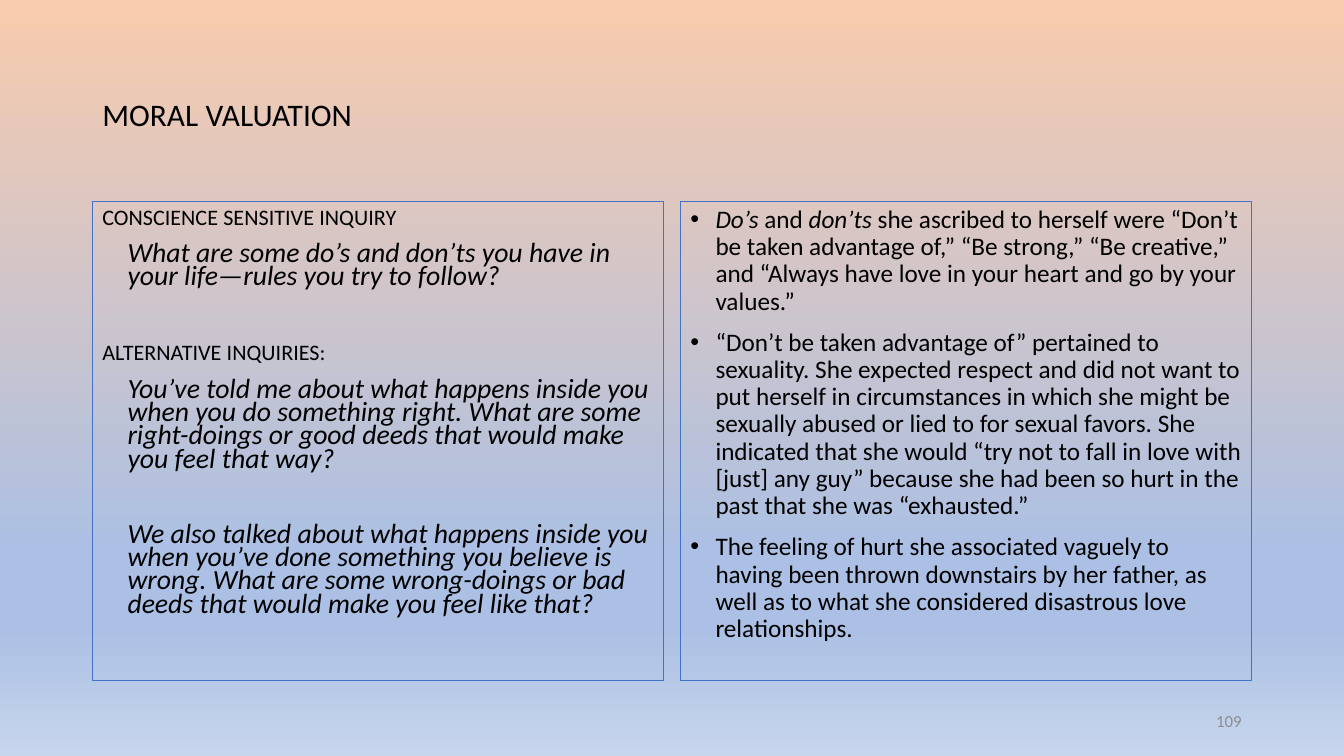
import dataclasses

import lxml.etree
import pptx
import pptx.dml.color
import pptx.enum.shapes
import pptx.enum.text
import pptx.oxml.ns
import pptx.util

ANCHOR = pptx.enum.text.MSO_ANCHOR
ALIGN = pptx.enum.text.PP_ALIGN


@dataclasses.dataclass(frozen=True)
class Theme:
    """Colours, font and type sizes of the deck."""
    font: str = "Calibri"
    ink: str = "000000"
    muted: str = "8C8C8C"
    outline: str = "4472C4"
    backdrop: tuple = ((0, "F8CBAD"), (74, "ABC0E4"), (83, "ABC0E4"), (100, "C7D5ED"))
    title_size: float = 28
    inquiry_size: float = 19.8
    answer_size: float = 18
    number_size: float = 12
    gap: float = 10
    wide_gap: float = 37


class SlideBuilder:
    """Draws styled elements on a grid of 160 columns and 150 rows."""

    def __init__(self, deck, theme):
        self.theme = theme
        self.column = deck.slide_width / 160
        self.row = deck.slide_height / 150
        self.page = deck.slides.add_slide(deck.slide_layouts[6])

    def place(self, left, top, width, height):
        return (round(left * self.column), round(top * self.row),
                round(width * self.column), round(height * self.row))

    def colour(self, value):
        return pptx.dml.color.RGBColor.from_string(value)

    def backdrop(self):
        fill = self.page.background.fill
        fill.gradient()
        fill.gradient_angle = 270
        qn = pptx.oxml.ns.qn
        stops = next(self.page.element.iter(qn("a:gsLst")))
        for stop in list(stops):
            stops.remove(stop)
        for position, value in self.theme.backdrop:
            stop = lxml.etree.SubElement(stops, qn("a:gs"), pos=str(position * 1000))
            lxml.etree.SubElement(stop, qn("a:srgbClr"), val=value)

    def label(self, area):
        box = self.page.shapes.add_textbox(*self.place(*area))
        box.text_frame.word_wrap = True
        box.text_frame.vertical_anchor = ANCHOR.MIDDLE
        return box.text_frame

    def panel(self, area):
        box = self.page.shapes.add_shape(
            pptx.enum.shapes.MSO_SHAPE.RECTANGLE, *self.place(*area))
        box.shadow.inherit = False
        box.fill.background()
        box.line.color.rgb = self.colour(self.theme.outline)
        box.line.width = pptx.util.Pt(0.75)
        box.text_frame.word_wrap = True
        box.text_frame.vertical_anchor = ANCHOR.TOP
        return box.text_frame

    def paragraph(self, frame, spans, size, colour=None, spacing=1.0, before=0,
                  align=ALIGN.LEFT, indent=0, bullet=False):
        para = frame.paragraphs[0]
        if para.runs:
            para = frame.add_paragraph()
        para.alignment = align
        para.line_spacing = spacing
        para.space_before = pptx.util.Pt(before)
        properties = para._p.get_or_add_pPr()
        margin = pptx.util.Inches(indent)
        properties.set("marL", str(margin))
        properties.set("indent", str(-margin if bullet else 0))
        if bullet:
            qn = pptx.oxml.ns.qn
            lxml.etree.SubElement(properties, qn("a:buFont"), typeface="Arial")
            lxml.etree.SubElement(properties, qn("a:buChar"), char="•")
        for text, style in spans:
            span = para.add_run()
            span.text = text
            span.font.name = self.theme.font
            span.font.size = pptx.util.Pt(size)
            span.font.color.rgb = self.colour(colour or self.theme.ink)
            span.font.italic = style == "italic"
            if style == "small":
                span._r.get_or_add_rPr().set("cap", "small")


INQUIRIES = [
    ("conscience sensitive inquiry", "small", False),
    ("What are some do’s and don’ts you have in your life—rules you try to follow?",
     "italic", False),
    ("alternative inquiries:", "small", True),
    ("You’ve told me about what happens inside you when you do something right. "
     "What are some right-doings or good deeds that would make you feel that way?",
     "italic", False),
    ("We also talked about what happens inside you when you’ve done something you "
     "believe is wrong. What are some wrong-doings or bad deeds that would make you "
     "feel like that?", "italic", True),
]

ANSWERS = [
    [("Do’s", "italic"), (" and ", ""), ("don’ts", "italic"),
     (" she ascribed to herself were “Don’t be taken advantage of,” “Be strong,” "
      "“Be creative,” and “Always have love in your heart and go by your values.”", "")],
    [("“Don’t be taken advantage of” pertained to sexuality. She expected respect and "
      "did not want to put herself in circumstances in which she might be sexually "
      "abused or lied to for sexual favors. She indicated that she would “try not to "
      "fall in love with [just] any guy” because she had been so hurt in the past that "
      "she was “exhausted.”", "")],
    [("The feeling of hurt she associated vaguely to having been thrown downstairs by "
      "her father, as well as to what she considered disastrous love relationships.", "")],
]


def main():
    """Build the moral valuation slide and save it."""
    deck = pptx.Presentation()
    deck.slide_width = pptx.util.Inches(13.33)
    deck.slide_height = pptx.util.Inches(7.5)
    theme = Theme()
    builder = SlideBuilder(deck, theme)
    builder.backdrop()

    title = builder.label((11, 8, 138, 29))
    builder.paragraph(title, [("moral valuation", "small")], theme.title_size,
                      spacing=0.9)

    inquiries = builder.panel((11, 40, 68, 95))
    for text, style, spaced in INQUIRIES:
        builder.paragraph(inquiries, [(text, style)], theme.inquiry_size, spacing=0.7,
                          before=theme.wide_gap if spaced else theme.gap,
                          indent=0.25 if style == "italic" else 0)

    answers = builder.panel((81, 40, 68, 95))
    for spans in ANSWERS:
        builder.paragraph(answers, spans, theme.answer_size, spacing=0.9,
                          before=theme.gap, indent=0.25, bullet=True)

    number = builder.label((113, 139, 36, 8))
    builder.paragraph(number, [("109", "")], theme.number_size, theme.muted,
                      align=ALIGN.RIGHT)
    deck.save("out.pptx")


if __name__ == "__main__":
    main()
